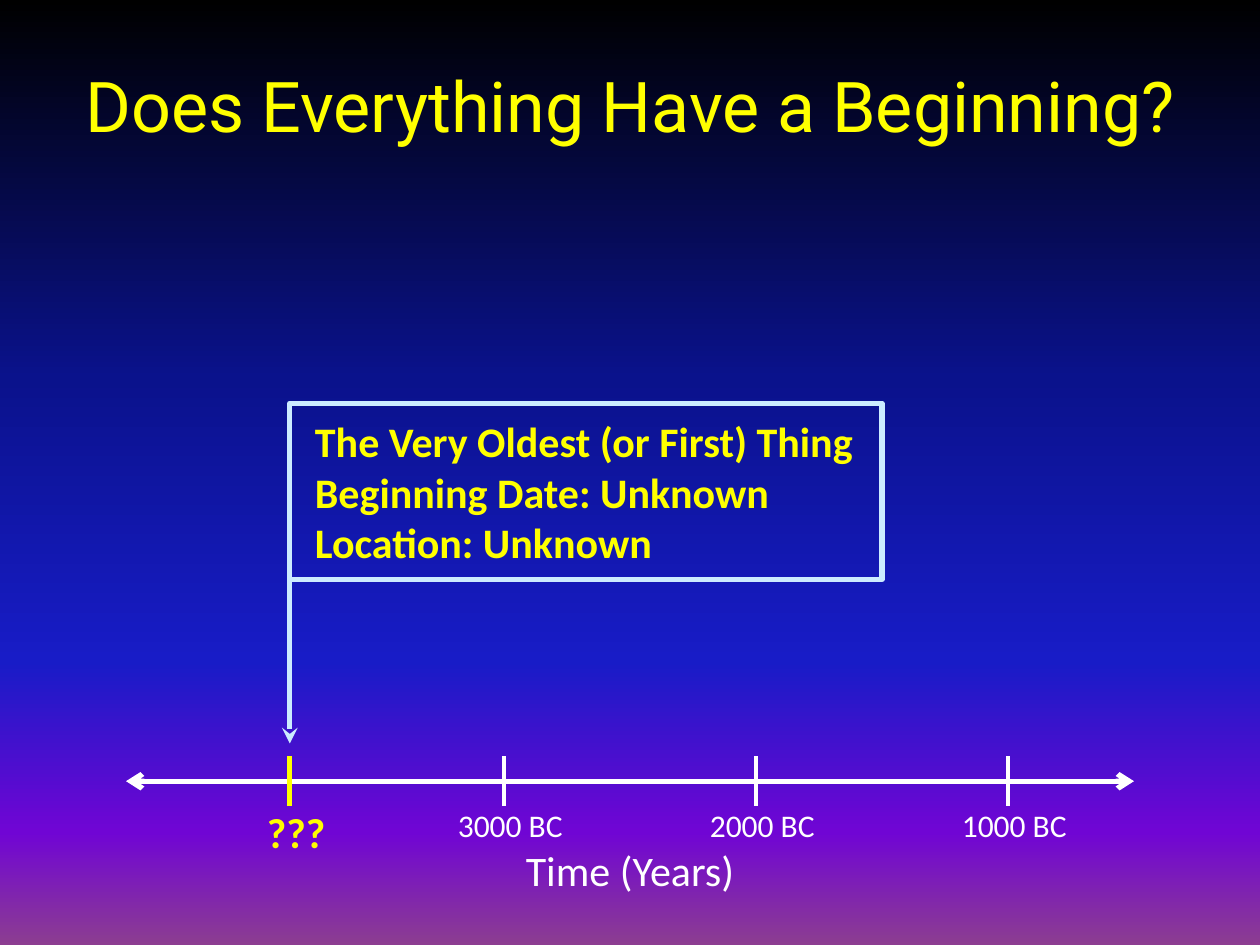
import pptx
import pptx.util
import pptx.dml.color
import pptx.enum.shapes
import pptx.enum.text
import pptx.oxml
import pptx.oxml.ns

Pt = pptx.util.Pt
RGB = pptx.dml.color.RGBColor.from_string
ANCHOR = pptx.enum.text.MSO_ANCHOR
ALIGN = pptx.enum.text.PP_ALIGN
AUTO = pptx.enum.text.MSO_AUTO_SIZE

# Content
TITLE = "Does Everything Have a Beginning?"
DATES = ["3000 BC", "2000 BC", "1000 BC"]
AXIS_TITLE = "Time (Years)"
UNKNOWN_DATE = "???"
OLDEST_THING = [
    "The Very Oldest (or First) Thing",
    "Beginning Date: Unknown",
    "Location: Unknown",
]

THEME = {
    "sky": [(0, "000000"), (40, "0A128C"), (70, "181CC7"), (88, "7005D4"), (100, "8C3D91")],
    "axis": "FFFFFF",
    "callout": "CCECFF",
    "accent": "FFFF00",
}
STYLES = {
    "title": {"name": "Roboto", "size": Pt(40), "color": THEME["accent"]},
    "date": {"name": "Calibri", "size": Pt(18), "color": THEME["axis"]},
    "axis": {"name": "Calibri", "size": Pt(24), "color": THEME["axis"]},
    "strong": {"name": "Calibri", "size": Pt(24), "bold": True, "color": THEME["accent"]},
}

# Layout in points
SLIDE_W, SLIDE_H = 720, 540
AXIS_LEFT, AXIS_RIGHT, AXIS_Y = 72, 648, 446.4
TICK_HALF = 14.4
FIRST_DATE_X, DATE_STEP = 288, 144
UNKNOWN_X = 165.6
LABEL_Y = AXIS_Y + TICK_HALF
CALLOUT_TOP, CALLOUT_W, CALLOUT_H = 230.4, 338.4, 100.8


def paint_background(slide):
    fill = slide.background.fill
    fill.gradient()
    fill.gradient_angle = 270  # counter-clockwise, so the stops run downwards
    stops = slide.background._cSld.find(".//" + pptx.oxml.ns.qn("a:gsLst"))
    for stop in list(stops):
        stops.remove(stop)
    for percent, color in THEME["sky"]:
        stops.append(pptx.oxml.parse_xml(
            f'<a:gs {pptx.oxml.ns.nsdecls("a")} pos="{percent * 1000}">'
            f'<a:srgbClr val="{color}"/></a:gs>'))


def write(shape, lines, style, align, **frame_format):
    frame = shape.text_frame
    for key, value in frame_format.items():
        setattr(frame, key, value)
    for index, line in enumerate(lines):
        paragraph = frame.add_paragraph() if index else frame.paragraphs[0]
        paragraph.alignment = align
        run = paragraph.add_run()
        run.text = line
        for key, value in STYLES[style].items():
            if key == "color":
                run.font.color.rgb = RGB(value)
            else:
                setattr(run.font, key, value)


def margins(size):
    return {f"margin_{side}": Pt(size) for side in ("left", "top", "right", "bottom")}


def add_label(slide, text, box, style, auto_size=AUTO.SHAPE_TO_FIT_TEXT):
    label = slide.shapes.add_textbox(*map(Pt, box))
    write(label, [text], style, ALIGN.CENTER, word_wrap=True, auto_size=auto_size,
          vertical_anchor=ANCHOR.TOP, **margins(0))


def add_line(slide, start, end, color, width, **arrows):
    line = slide.shapes.add_connector(
        pptx.enum.shapes.MSO_CONNECTOR.STRAIGHT, *map(Pt, start + end))
    line.line.color.rgb = RGB(color)
    line.line.width = Pt(width)
    for arrow_end, kind in arrows.items():
        line.line._get_or_add_ln().append(pptx.oxml.parse_xml(
            f'<a:{arrow_end} {pptx.oxml.ns.nsdecls("a")} type="{kind}"/>'))
    line._element.spPr.append(pptx.oxml.parse_xml(
        f'<a:effectLst {pptx.oxml.ns.nsdecls("a")}/>'))


def add_tick(slide, x, color, width):
    add_line(slide, (x, AXIS_Y - TICK_HALF), (x, AXIS_Y + TICK_HALF), color, width)


def main():
    deck = pptx.Presentation()
    deck.slide_width, deck.slide_height = Pt(SLIDE_W), Pt(SLIDE_H)
    slide = deck.slides.add_slide(deck.slide_layouts[6])
    paint_background(slide)
    add_label(slide, TITLE, (28.8, 36, 662.4, 57.6), "title", AUTO.NONE)

    # Time axis with evenly spaced dates
    add_line(slide, (AXIS_LEFT, AXIS_Y), (AXIS_RIGHT, AXIS_Y), THEME["axis"], 3,
             headEnd="arrow", tailEnd="arrow")
    for index, date in enumerate(DATES):
        x = FIRST_DATE_X + index * DATE_STEP
        add_tick(slide, x, THEME["axis"], 2)
        add_label(slide, date, (x - 28.8, LABEL_Y, 64.8, 21.6), "date")
    add_label(slide, AXIS_TITLE, (295.2, 482.4, 129.6, 36), "axis")

    # Unknown beginning
    add_tick(slide, UNKNOWN_X, THEME["accent"], 3)
    add_label(slide, UNKNOWN_DATE, (122.4, LABEL_Y, 93.6, 28.8), "strong")

    # Callout and its pointer
    callout = slide.shapes.add_shape(
        pptx.enum.shapes.MSO_SHAPE.RECTANGLE,
        *map(Pt, (UNKNOWN_X, CALLOUT_TOP, CALLOUT_W, CALLOUT_H)))
    callout.shadow.inherit = False
    callout.fill.background()
    callout.line.color.rgb = RGB(THEME["callout"])
    callout.line.width = Pt(3)
    write(callout, OLDEST_THING, "strong", ALIGN.LEFT, word_wrap=True,
          vertical_anchor=ANCHOR.MIDDLE, **margins(14.4))
    add_line(slide, (UNKNOWN_X, CALLOUT_TOP + CALLOUT_H), (UNKNOWN_X, 424.8),
             THEME["callout"], 3, tailEnd="stealth")

    deck.save("out.pptx")


if __name__ == "__main__":
    main()
